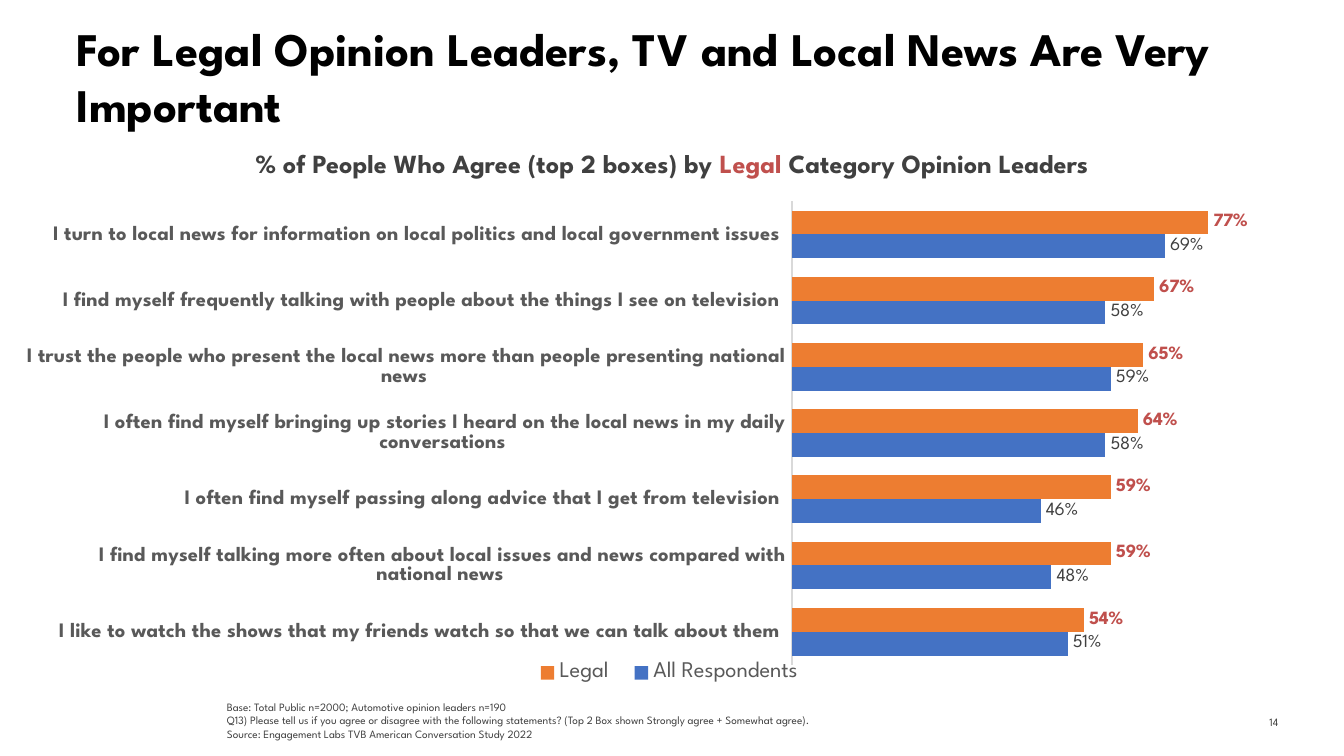
from lxml import etree
from pptx import Presentation
from pptx.chart.data import CategoryChartData
from pptx.dml.color import RGBColor
from pptx.enum.chart import XL_CHART_TYPE, XL_LABEL_POSITION, XL_LEGEND_POSITION, XL_TICK_MARK
from pptx.enum.text import MSO_ANCHOR, PP_ALIGN
from pptx.oxml.ns import qn
from pptx.util import Inches, Pt

BAR_CLUSTERED = XL_CHART_TYPE.BAR_CLUSTERED
OUTSIDE_END = XL_LABEL_POSITION.OUTSIDE_END
LEGEND_BOTTOM = XL_LEGEND_POSITION.BOTTOM
NO_TICK = XL_TICK_MARK.NONE
TOP, MIDDLE, BOTTOM = MSO_ANCHOR.TOP, MSO_ANCHOR.MIDDLE, MSO_ANCHOR.BOTTOM
LEFT, CENTER, RIGHT = PP_ALIGN.LEFT, PP_ALIGN.CENTER, PP_ALIGN.RIGHT


class Theme:
    font = "League Spartan"
    black = RGBColor.from_string("000000")
    dark = RGBColor.from_string("404040")
    gray = RGBColor.from_string("595959")
    number = RGBColor.from_string("3C3C3A")
    axis = RGBColor.from_string("D9D9D9")
    red = RGBColor.from_string("C0504D")
    blue = RGBColor.from_string("4472C4")
    orange = RGBColor.from_string("ED7D31")
    title_size = Pt(25)
    heading_size = Pt(14)
    legend_size = Pt(12)
    category_size = Pt(11)
    label_size = Pt(10)
    note_size = Pt(6)


def style_font(font, size, color, bold=False):
    font.name = Theme.font
    font.size = size
    font.bold = bold
    font.color.rgb = color


def set_layout(parent, **values):
    layout = parent.find(qn("c:layout"))
    if layout is None:
        layout = etree.Element(qn("c:layout"))
        parent.insert(1 if parent.tag == qn("c:legend") else 0, layout)
    manual = etree.SubElement(layout, qn("c:manualLayout"))
    for name, value in values.items():
        etree.SubElement(manual, qn(f"c:{name}"), val=str(value))


presentation = Presentation()
presentation.slide_width = Inches(10)
presentation.slide_height = Inches(10) * 9 // 16
slide = presentation.slides.add_slide(presentation.slide_layouts[5])

title = slide.shapes.title
title.left, title.top = Inches(0.47), Inches(0.15)
title.width, title.height = Inches(9.02), Inches(0.79)
title.text_frame.margin_top = 0
title.text_frame.vertical_anchor = TOP
title.text_frame.text = "For Legal Opinion Leaders, TV and Local News Are Very Important"
paragraph = title.text_frame.paragraphs[0]
paragraph.alignment = LEFT
style_font(paragraph.font, Theme.title_size, Theme.black, True)

heading = slide.shapes.add_textbox(Inches(1.4), Inches(1.05), Inches(7.2), Inches(0.34))
heading.text_frame.word_wrap = False
paragraph = heading.text_frame.paragraphs[0]
paragraph.alignment = CENTER
for text, color in (
    ("% of People Who Agree (top 2 boxes) by ", Theme.dark),
    ("Legal ", Theme.red),
    ("Category Opinion Leaders", Theme.dark),
):
    run = paragraph.add_run()
    run.text = text
    style_font(run.font, Theme.heading_size, color, True)

statements = (
    ("I like to watch the shows that my friends watch so that we can talk about them ", 0.51, 0.54),
    ("I find myself talking more often about local issues and news compared with national news ", 0.48, 0.59),
    ("I often find myself passing along advice that I get from television ", 0.46, 0.59),
    ("I often find myself bringing up stories I heard on the local news in my daily conversations ", 0.58, 0.64),
    ("I trust the people who present the local news more than people presenting national news ", 0.59, 0.65),
    ("I find myself frequently talking with people about the things I see on television ", 0.58, 0.67),
    ("I turn to local news for information on local politics and local government issues ", 0.69, 0.77),
)
categories, all_respondents, legal = zip(*statements)
chart_data = CategoryChartData(number_format="0%")
chart_data.categories = categories
chart_data.add_series("All Respondents", all_respondents)
chart_data.add_series("Legal", legal)
chart_width = 9.53
chart = slide.shapes.add_chart(
    BAR_CLUSTERED, Inches(0.2), Inches(1.42), Inches(chart_width), Inches(3.92), chart_data
).chart
style_font(chart.font, Theme.label_size, Theme.black)
chart.has_title = False

category_axis = chart.category_axis
category_axis.major_tick_mark = NO_TICK
category_axis.format.line.color.rgb = Theme.axis
category_axis.format.line.width = Pt(0.75)
style_font(category_axis.tick_labels.font, Theme.category_size, Theme.gray, True)
value_axis = chart.value_axis
value_axis.minimum_scale = 0
value_axis.maximum_scale = 0.9
value_axis.has_major_gridlines = False
value_axis.tick_labels.number_format = "#,##0%"
value_axis.tick_labels.number_format_is_linked = False
value_axis.visible = False

plot = chart.plots[0]
plot.gap_width = 78
plot.overlap = 0
plot.vary_by_categories = False
series_styles = ((Theme.blue, Theme.dark, False), (Theme.orange, Theme.red, True))
for series, (fill_color, label_color, bold) in zip(plot.series, series_styles):
    series.format.fill.solid()
    series.format.fill.fore_color.rgb = fill_color
    labels = series.data_labels
    labels.show_value = True
    labels.number_format = "0%"
    labels.number_format_is_linked = False
    labels.position = OUTSIDE_END
    style_font(labels.font, Theme.label_size, label_color, bold)

chart.has_legend = True
legend = chart.legend
legend.position = LEGEND_BOTTOM
legend.include_in_layout = False
style_font(legend.font, Theme.legend_size, Theme.gray)
plot_area = chart.element.find(".//" + qn("c:plotArea"))
legend_element = chart.element.find(".//" + qn("c:legend"))
set_layout(plot_area, layoutTarget="inner", xMode="edge", yMode="edge",
           x=5.69 / chart_width, y=0.02, w=0.38, h=0.88)
set_layout(legend_element, xMode="edge", yMode="edge",
           x=3.68 / chart_width, y=0.88, w=0.23, h=0.07)

notes = (
    "Base: Total Public n=2000; Automotive opinion leaders n=190",
    "Q13) Please tell us if you agree or disagree with the following statements? "
    "(Top 2 Box shown Strongly agree + Somewhat agree).",
    "Source: Engagement Labs TVB American Conversation Study 2022",
)
for left, top, width, height, lines, color, alignment, anchor in (
    (1.59, 5.16, 8.14, 0.4, notes, Theme.dark, LEFT, BOTTOM),
    (9.04, 5.22, 0.59, 0.3, ("14 ",), Theme.number, RIGHT, MIDDLE),
):
    text_box = slide.shapes.add_textbox(Inches(left), Inches(top), Inches(width), Inches(height))
    text_frame = text_box.text_frame
    text_frame.word_wrap = True
    text_frame.vertical_anchor = anchor
    text_frame.text = "\n".join(lines)
    for paragraph in text_frame.paragraphs:
        paragraph.alignment = alignment
        style_font(paragraph.font, Theme.note_size, color)

presentation.save("out.pptx")
